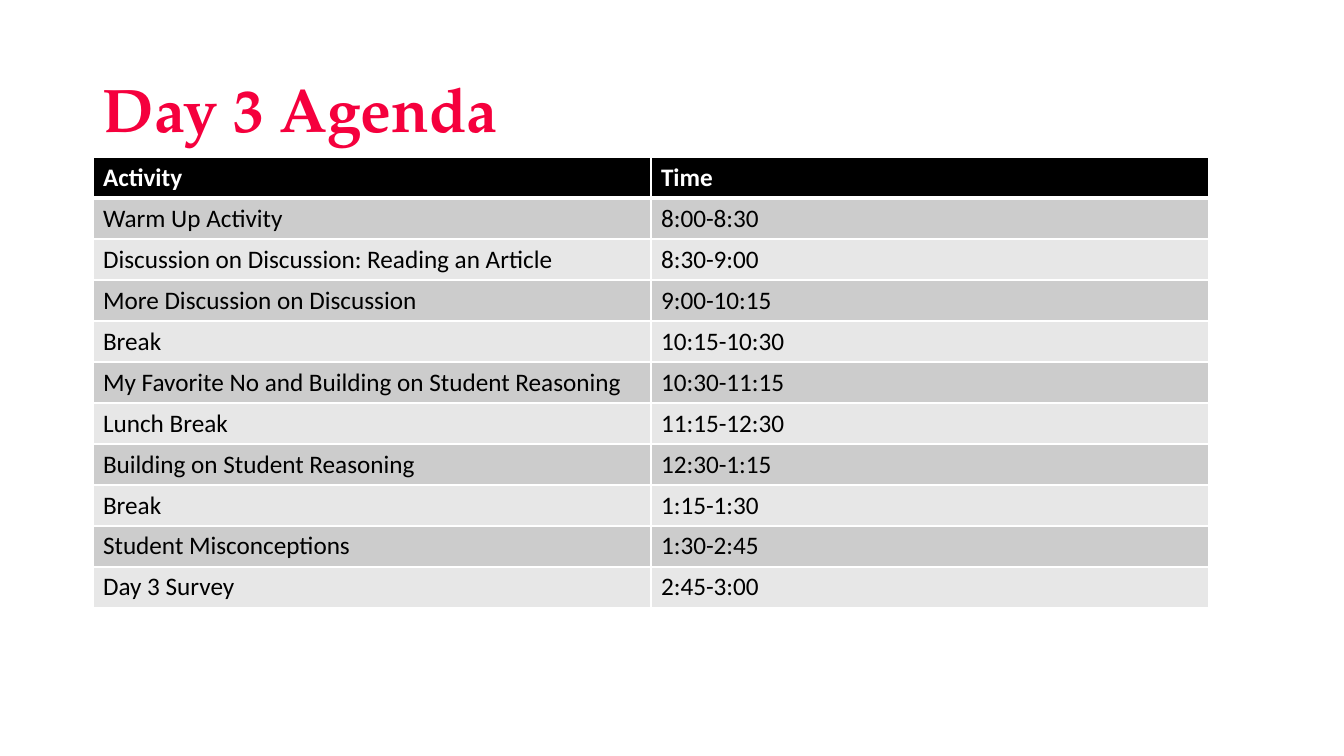
from pptx import Presentation
from pptx.dml.color import RGBColor
from pptx.enum.text import MSO_ANCHOR
from pptx.oxml import parse_xml
from pptx.oxml.ns import nsdecls
from pptx.util import Emu, Pt

MIDDLE = MSO_ANCHOR.MIDDLE
CRIMSON = RGBColor(0xF5, 0x00, 0x3D)
BLACK = RGBColor(0x00, 0x00, 0x00)
WHITE = RGBColor(0xFF, 0xFF, 0xFF)
DARK_BAND = RGBColor(0xCC, 0xCC, 0xCC)
LIGHT_BAND = RGBColor(0xE7, 0xE7, 0xE7)

SLIDE_WIDTH, SLIDE_HEIGHT = 1344, 756
LEFT = 93
AGENDA = [
    ("Activity", "Time"),
    ("Warm Up Activity", "8:00-8:30"),
    ("Discussion on Discussion: Reading an Article", "8:30-9:00"),
    ("More Discussion on Discussion", "9:00-10:15"),
    ("Break", "10:15-10:30"),
    ("My Favorite No and Building on Student Reasoning", "10:30-11:15"),
    ("Lunch Break", "11:15-12:30"),
    ("Building on Student Reasoning", "12:30-1:15"),
    ("Break", "1:15-1:30"),
    ("Student Misconceptions", "1:30-2:45"),
    ("Day 3 Survey", "2:45-3:00"),
]


def px(length):
    """Turn pixels at 100.8 to the inch into EMU."""
    return Emu(round(length * 914400 / 100.8))


class AgendaSlide:
    """Hold the text styles and the slide that is being built."""

    styles = {
        "title": {"name": "TeX Gyre Pagella", "size": Pt(44), "bold": True},
        "header": {"name": "Calibri", "size": Pt(18), "bold": True},
        "body": {"name": "Calibri", "size": Pt(18), "bold": False},
    }

    def __init__(self, presentation):
        """Add a blank slide."""
        self.slide = presentation.slides.add_slide(presentation.slide_layouts[6])

    def add_text(self, paragraph, text, style, color):
        """Put styled text into a paragraph."""
        run = paragraph.add_run()
        run.text = text
        for attribute, value in self.styles[style].items():
            setattr(run.font, attribute, value)
        run.font.color.rgb = color

    def title(self, text, left, top, width, height):
        """Add the heading, centred vertically in its box."""
        shape = self.slide.shapes.add_textbox(px(left), px(top), px(width), px(height))
        frame = shape.text_frame
        frame.word_wrap = True
        frame.vertical_anchor = MIDDLE
        paragraph = frame.paragraphs[0]
        paragraph.line_spacing = 0.9
        self.add_text(paragraph, text, "title", CRIMSON)

    def border(self, cell, side, points):
        """Draw one white edge of a cell."""
        cell._tc.get_or_add_tcPr().append(parse_xml(
            f'<a:ln{side} {nsdecls("a")} w="{Pt(points)}"><a:solidFill>'
            f'<a:srgbClr val="{WHITE}"/></a:solidFill></a:ln{side}>'))

    def table(self, rows, left, top, column_width, row_height):
        """Add a banded table whose first row is the header."""
        columns = len(rows[0])
        table = self.slide.shapes.add_table(
            len(rows), columns, px(left), px(top),
            px(columns * column_width), px(len(rows) * row_height)).table
        for column in table.columns:
            column.width = px(column_width)
        for index, texts in enumerate(rows):
            table.rows[index].height = px(row_height)
            style, color, fill = "body", BLACK, DARK_BAND if index % 2 else LIGHT_BAND
            if index == 0:
                style, color, fill = "header", WHITE, BLACK
            edges = {"L": 1, "R": 1, "T": 3 if index == 1 else 1, "B": 3 if index == 0 else 1}
            for cell, text in zip(table.rows[index].cells, texts):
                for side, points in edges.items():
                    self.border(cell, side, points)
                cell.fill.solid()
                cell.fill.fore_color.rgb = fill
                self.add_text(cell.text_frame.paragraphs[0], text, style, color)


def main():
    """Build and save the agenda."""
    presentation = Presentation()
    presentation.slide_width = px(SLIDE_WIDTH)
    presentation.slide_height = px(SLIDE_HEIGHT)
    agenda = AgendaSlide(presentation)
    agenda.title("Day 3 Agenda", LEFT, 40, 1159, 146)
    agenda.table(AGENDA, LEFT, 157, 558, 41)
    presentation.save("out.pptx")


if __name__ == "__main__":
    main()
